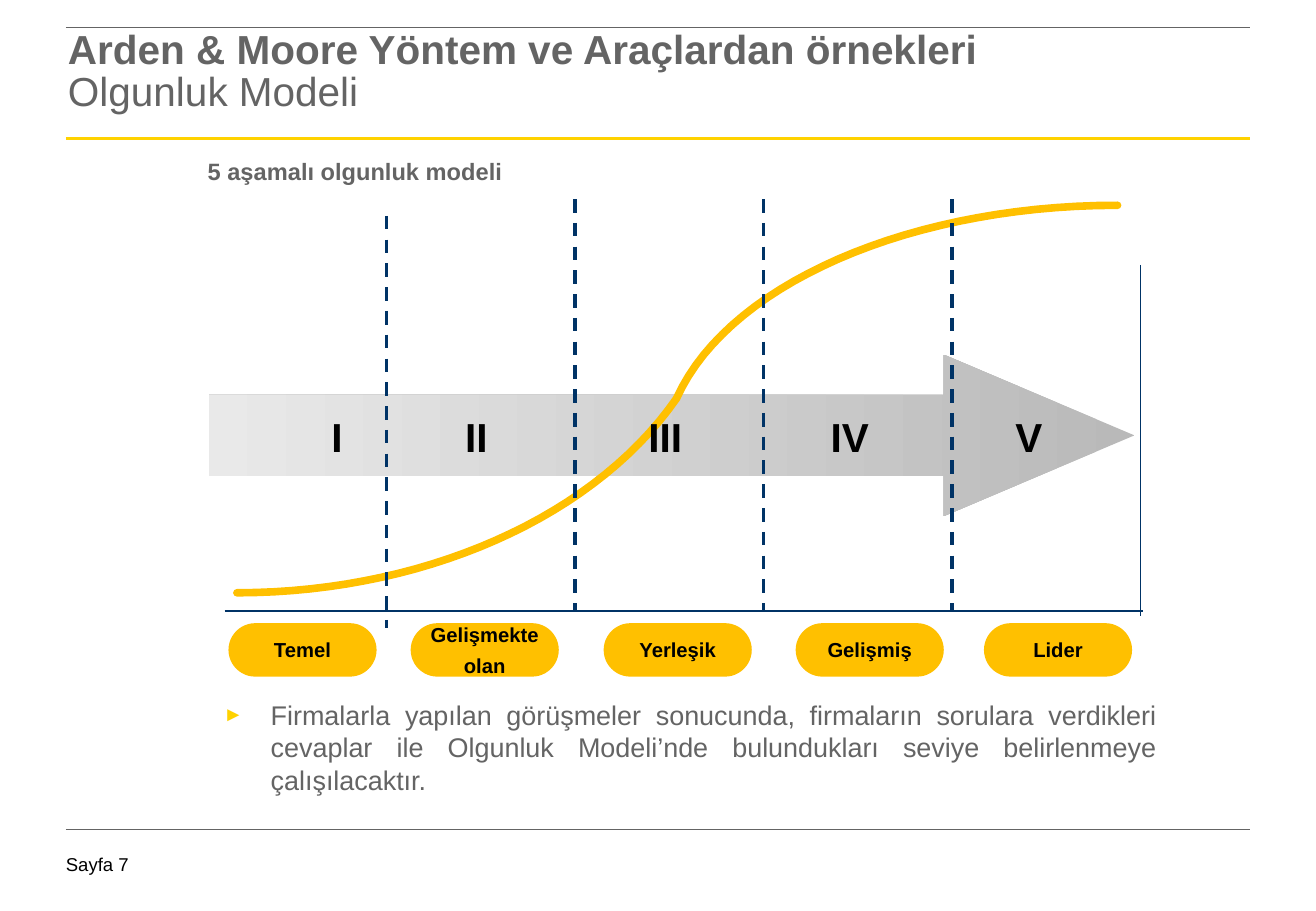
from dataclasses import dataclass

import pptx
import pptx.dml.color
import pptx.enum.dml
import pptx.enum.shapes
import pptx.enum.text
import pptx.oxml
import pptx.oxml.ns
import pptx.util
from lxml import etree

Pt = pptx.util.Pt
ALIGN = pptx.enum.text.PP_ALIGN
ANCHOR = pptx.enum.text.MSO_ANCHOR
SHAPE = pptx.enum.shapes.MSO_SHAPE
FONT = "Arial"
COLORS = {
    "text": "646464", "black": "000000", "yellow": "FFD200", "amber": "FFC000",
    "navy": "003366", "arrow_dark": "B9B9B9", "arrow_light": "E9E9E9",
}
Point = tuple[float, float]


@dataclass
class Stage:
    numeral: str
    numeral_left: float
    name: str
    pill_left: float


@dataclass
class Rule:
    start: Point
    end: Point
    color: str
    width: float
    dashed: bool = False


STAGES = [
    Stage("I", 189.4, "Temel", 135.4),
    Stage("II", 268.6, "Gelişmekte\nolan", 243.4),
    Stage("III", 377.3, "Yerleşik", 357.8),
    Stage("IV", 485.3, "Gelişmiş", 471.6),
    Stage("V", 594.7, "Lider", 583.2),
]
FRAME_RULES = [
    Rule((39, 82), (741, 82), "yellow", 1.5),
    Rule((39, 491.8), (741, 491.8), "text", 0.25),
    Rule((39, 16), (741, 16), "text", 0.5),
]
AXES = [
    Rule((133.2, 362.2), (677.5, 362.2), "navy", 0.75),
    Rule((676.1, 157), (676.1, 365), "navy", 0.75),
]
# The first divider sits lower than the others
DIVIDERS = [
    Rule((229 + 111.8 * i, 118 + drop), (229 + 111.8 * i, 362.2 + drop), "navy", 2, True)
    for i, drop in enumerate((10, 0, 0, 0))
]
# Control points of the two halves of the growth curve
CURVE = [
    [(140.4, 351.4), (251.3, 351.4), (352.1, 306.7), (401, 236.2)],
    [(401, 236.2), (431.3, 168.5), (539.3, 121.7), (662.4, 121.7)],
]


def rgb(color: str) -> pptx.dml.color.RGBColor:
    return pptx.dml.color.RGBColor.from_string(COLORS[color])


def write_text(shape, text: str, *, size: float, color: str = "text", bold_lines: int = 0,
               align=ALIGN.LEFT, anchor=ANCHOR.TOP, wrap: bool = True,
               insets: Point = (7.2, 3.6), line_spacing: float = 1.0,
               space_before: float = 0) -> None:
    """Write one paragraph per line; the leading bold_lines are bold."""
    frame = shape.text_frame
    frame.word_wrap = wrap
    frame.vertical_anchor = anchor
    frame.margin_left = frame.margin_right = Pt(insets[0])
    frame.margin_top = frame.margin_bottom = Pt(insets[1])
    for index, line in enumerate(text.split("\n")):
        paragraph = frame.paragraphs[0] if index == 0 else frame.add_paragraph()
        paragraph.alignment = align
        paragraph.line_spacing = line_spacing
        paragraph.space_before = Pt(space_before if index else 0)
        run = paragraph.add_run()
        run.text = line
        run.font.name = FONT
        run.font.size = Pt(size)
        run.font.bold = index < bold_lines
        run.font.color.rgb = rgb(color)


def add_text(slide, left: float, top: float, width: float, height: float,
             text: str, **text_format):
    shape = slide.shapes.add_textbox(Pt(left), Pt(top), Pt(width), Pt(height))
    write_text(shape, text, **text_format)
    return shape


def add_rule(slide, rule: Rule) -> None:
    connector = slide.shapes.add_connector(
        pptx.enum.shapes.MSO_CONNECTOR.STRAIGHT,
        *(Pt(value) for value in rule.start + rule.end))
    connector.line.color.rgb = rgb(rule.color)
    connector.line.width = Pt(rule.width)
    if rule.dashed:
        connector.line.dash_style = pptx.enum.dml.MSO_LINE.DASH
    etree.SubElement(connector._element.spPr, pptx.oxml.ns.qn("a:effectLst"))


def add_arrow(slide) -> None:
    arrow = slide.shapes.add_shape(SHAPE.RIGHT_ARROW, Pt(123.8), Pt(210.2), Pt(548.6), Pt(95.8))
    arrow.shadow.inherit = False
    arrow.adjustments[0] = 0.5
    arrow.adjustments[1] = 1.18
    arrow.line.fill.background()
    arrow.fill.gradient()
    arrow.fill.gradient_angle = 180
    for stop, color in zip(arrow.fill.gradient_stops, ("arrow_dark", "arrow_light")):
        stop.color.rgb = rgb(color)


def bezier(controls: list[Point], t: float) -> Point:
    weights = ((1 - t) ** 3, 3 * t * (1 - t) ** 2, 3 * t ** 2 * (1 - t), t ** 3)
    return (sum(w * x for w, (x, _) in zip(weights, controls)),
            sum(w * y for w, (_, y) in zip(weights, controls)))


def add_curve(slide, steps: int = 30) -> None:
    points = [bezier(half, i / steps) for half in CURVE for i in range(steps + 1)]
    vertices = [(Pt(x), Pt(y)) for x, y in points]
    builder = slide.shapes.build_freeform(*vertices[0])
    builder.add_line_segments(vertices[1:], close=False)
    curve = builder.convert_to_shape()
    curve.shadow.inherit = False
    curve.fill.background()
    curve.line.color.rgb = rgb("amber")
    curve.line.width = Pt(4.5)
    outline = curve.line._get_or_add_ln()
    outline.set("cap", "rnd")
    etree.SubElement(outline, pptx.oxml.ns.qn("a:round"))


def add_pill(slide, stage: Stage) -> None:
    pill = slide.shapes.add_shape(
        SHAPE.ROUNDED_RECTANGLE, Pt(stage.pill_left), Pt(369.4), Pt(87.8), Pt(31.7))
    pill.shadow.inherit = False
    pill.adjustments[0] = 0.5
    pill.fill.solid()
    pill.fill.fore_color.rgb = rgb("amber")
    pill.line.fill.background()
    write_text(pill, stage.name, size=12, color="black", bold_lines=2, align=ALIGN.CENTER,
               anchor=ANCHOR.MIDDLE, wrap=False, insets=(6.5, 2.9), space_before=4)


def add_bullet(paragraph, character: str, color: str, percent: int, indent: float) -> None:
    properties = paragraph._p.get_or_add_pPr()
    properties.set("marL", str(Pt(indent)))
    properties.set("indent", str(-Pt(indent)))
    qn = pptx.oxml.ns.qn
    bullet_color = etree.SubElement(properties, qn("a:buClr"))
    etree.SubElement(bullet_color, qn("a:srgbClr"), val=COLORS[color])
    etree.SubElement(properties, qn("a:buSzPct"), val=str(percent * 1000))
    etree.SubElement(properties, qn("a:buFont"), typeface=FONT)
    etree.SubElement(properties, qn("a:buChar"), char=character)


def main() -> None:
    presentation = pptx.Presentation()
    presentation.slide_width = Pt(780)
    presentation.slide_height = Pt(540)
    slide = presentation.slides.add_slide(presentation.slide_layouts[6])

    # Page frame, title and footer
    for rule in FRAME_RULES:
        add_rule(slide, rule)
    add_text(slide, 40.3, 16, 739.4, 67.7,
             "Arden & Moore Yöntem ve Araçlardan örnekleri\nOlgunluk Modeli",
             size=24, bold_lines=1, insets=(0, 2.9), line_spacing=0.85)
    add_text(slide, 39, 505.4, 57, 16, "Sayfa 7", size=11, color="black", insets=(0, 0))

    # Maturity diagram
    add_text(slide, 116, 89.3, 214, 24.5, "5 aşamalı olgunluk modeli", size=14, bold_lines=1)
    add_arrow(slide)
    for axis in AXES:
        add_rule(slide, axis)
    add_curve(slide)
    for divider in DIVIDERS:
        add_rule(slide, divider)
    for stage in STAGES:
        add_text(slide, stage.numeral_left, 240.5, 64, 36.7, stage.numeral,
                 size=24, color="black", bold_lines=1)
        add_pill(slide, stage)

    # Explanation
    explanation = add_text(
        slide, 125.3, 410.4, 567.4, 65.5,
        "Firmalarla yapılan görüşmeler sonucunda, firmaların sorulara verdikleri cevaplar ile "
        "Olgunluk Modeli’nde bulundukları seviye belirlenmeye çalışılacaktır.",
        size=16, align=ALIGN.JUSTIFY)
    add_bullet(explanation.text_frame.paragraphs[0], "►", "yellow", 75, 28.1)

    presentation.save("out.pptx")


if __name__ == "__main__":
    main()
